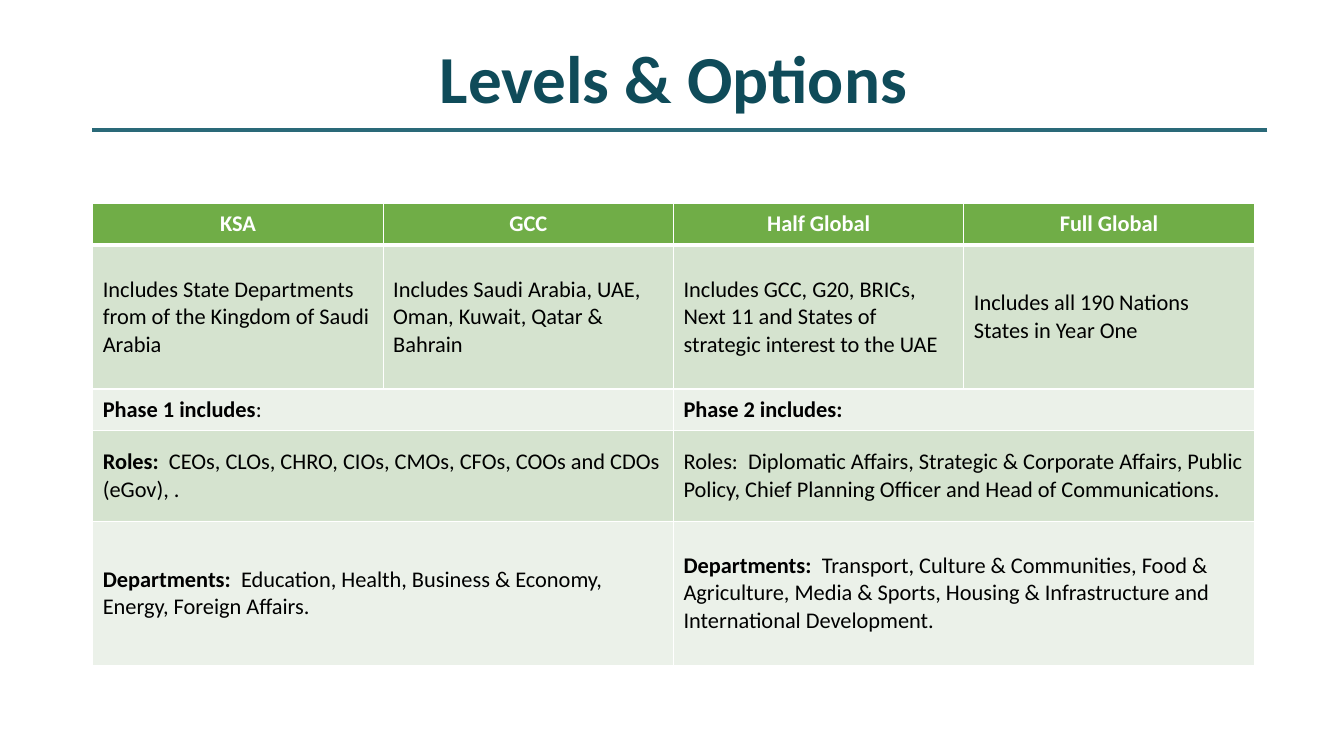
"""Build the Levels & Options slide with its table of levels and phases."""
from dataclasses import dataclass

from lxml.etree import SubElement
from pptx import Presentation
from pptx.dml.color import RGBColor
from pptx.enum.shapes import MSO_CONNECTOR
from pptx.enum.text import MSO_ANCHOR, PP_ALIGN
from pptx.oxml import parse_xml
from pptx.oxml.ns import nsdecls, qn
from pptx.slide import Slide
from pptx.table import _Cell
from pptx.text.text import _Paragraph
from pptx.util import Emu, Pt

PX = 9144
FONT = "Calibri"
WHITE = "FFFFFF"
BLACK = "000000"
GREEN = "70AD47"
DARK_BAND = "D5E3CF"
LIGHT_BAND = "EBF1E9"
TITLE_TEAL = "0F4B59"
RULE_TEAL = "2A6978"
COLUMN_COUNT = 4
COLUMN_WIDTH = 288


@dataclass(frozen=True)
class Span:
    text: str
    bold: bool = False


@dataclass(frozen=True)
class Row:
    height: int
    fill: str
    cells: list[list[Span]]
    color: str = BLACK
    align: PP_ALIGN = PP_ALIGN.LEFT
    top_border: int = 1
    bottom_border: int = 1


ROWS = [
    Row(41, GREEN,
        [[Span(name, True)] for name in ("KSA", "GCC", "Half Global", "Full Global")],
        WHITE, PP_ALIGN.CENTER, bottom_border=3),
    Row(143, DARK_BAND, [
        [Span("Includes State Departments from of the Kingdom of Saudi Arabia")],
        [Span("Includes Saudi Arabia, UAE, Oman, Kuwait, Qatar & Bahrain")],
        [Span("Includes GCC, G20, BRICs, Next 11 and States of strategic interest to the UAE")],
        [Span("Includes all 190 Nations States in Year One")],
    ], top_border=3),
    Row(41, LIGHT_BAND, [
        [Span("Phase 1 includes", True), Span(":")],
        [Span("Phase 2 includes:", True)],
    ]),
    Row(90, DARK_BAND, [
        [Span("Roles:  ", True),
         Span("CEOs, CLOs, CHRO, CIOs, CMOs, CFOs, COOs and CDOs (eGov), .")],
        [Span("Roles:  Diplomatic Affairs, Strategic & Corporate Affairs, Public Policy, "
              "Chief Planning Officer and Head of Communications.")],
    ]),
    Row(143, LIGHT_BAND, [
        [Span("Departments:  ", True),
         Span("Education, Health, Business & Economy, Energy, Foreign Affairs.")],
        [Span("Departments:  ", True),
         Span("Transport, Culture & Communities, Food & Agriculture, Media & Sports, "
              "Housing & Infrastructure and International Development.")],
    ]),
]


def px(length: int) -> Emu:
    """Turn px into EMU."""
    return Emu(length * PX)


def rgb(color: str) -> RGBColor:
    """Turn a hex string into a colour."""
    return RGBColor.from_string(color)


def add_spans(paragraph: _Paragraph, spans: list[Span], size: int, color: str) -> None:
    """Add each span to the paragraph as a run."""
    for span in spans:
        run = paragraph.add_run()
        run.text = span.text
        run.font.name = FONT
        run.font.size = Pt(size)
        run.font.bold = span.bold
        run.font.color.rgb = rgb(color)


def style_cell(cell: _Cell, row: Row) -> None:
    """Fill a cell and give it white borders."""
    cell.fill.solid()
    cell.fill.fore_color.rgb = rgb(row.fill)
    cell.vertical_anchor = MSO_ANCHOR.MIDDLE
    properties = cell._tc.get_or_add_tcPr()
    widths = {"L": 1, "R": 1, "T": row.top_border, "B": row.bottom_border}
    for position, (side, width) in enumerate(widths.items()):
        properties.insert(position, parse_xml(
            f'<a:ln{side} {nsdecls("a")} w="{Pt(width)}"><a:solidFill>'
            f'<a:srgbClr val="{WHITE}"/></a:solidFill></a:ln{side}>'))


def add_levels_table(slide: Slide) -> None:
    """Add the table, spreading each row's cells over the columns."""
    height = sum(row.height for row in ROWS)
    frame = slide.shapes.add_table(len(ROWS), COLUMN_COUNT, px(92), px(202),
                                   px(COLUMN_COUNT * COLUMN_WIDTH), px(height))
    table = frame.table
    table.horz_banding = False
    for column in table.columns:
        column.width = px(COLUMN_WIDTH)
    for row_index, row in enumerate(ROWS):
        table.rows[row_index].height = px(row.height)
        for column_index in range(COLUMN_COUNT):
            style_cell(table.cell(row_index, column_index), row)
        step = COLUMN_COUNT // len(row.cells)
        for cell_index, spans in enumerate(row.cells):
            first = cell_index * step
            cell = table.cell(row_index, first)
            if step > 1:
                cell.merge(table.cell(row_index, first + step - 1))
            paragraph = cell.text_frame.paragraphs[0]
            paragraph.alignment = row.align
            add_spans(paragraph, spans, 16, row.color)


def add_title(slide: Slide) -> None:
    """Add the centred slide title."""
    shape = slide.shapes.add_textbox(px(93), px(9), px(1150), px(145))
    shape.text_frame.word_wrap = True
    shape.text_frame.vertical_anchor = MSO_ANCHOR.MIDDLE
    paragraph = shape.text_frame.paragraphs[0]
    paragraph.alignment = PP_ALIGN.CENTER
    paragraph.line_spacing = 0.9
    add_spans(paragraph, [Span("Levels & Options", True)], 48, TITLE_TEAL)


def add_title_rule(slide: Slide) -> None:
    """Add the line under the title."""
    connector = slide.shapes.add_connector(
        MSO_CONNECTOR.STRAIGHT, px(1257), px(129), px(91), px(129))
    connector.line.color.rgb = rgb(RULE_TEAL)
    connector.line.width = Pt(3)
    SubElement(connector._element.spPr, qn("a:effectLst"))


def main() -> None:
    """Build and save the presentation."""
    presentation = Presentation()
    presentation.slide_width = px(1333)
    presentation.slide_height = px(750)
    slide = presentation.slides.add_slide(presentation.slide_layouts[6])
    add_levels_table(slide)
    add_title(slide)
    add_title_rule(slide)
    presentation.save("out.pptx")


if __name__ == "__main__":
    main()
